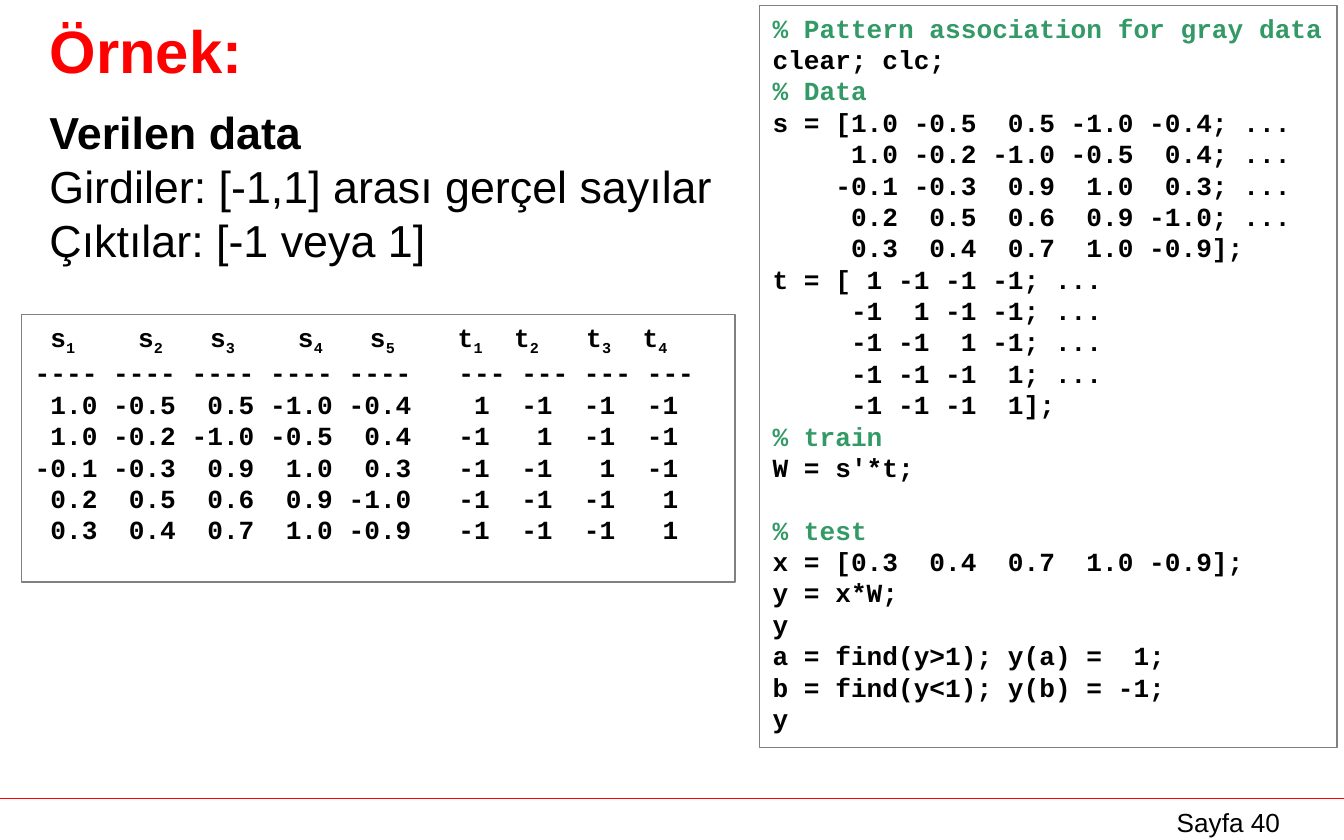
import pptx
import pptx.dml.color
import pptx.enum.shapes
import pptx.enum.text
import pptx.util
from lxml import etree
from pptx.util import Inches, Pt

RED, BLACK, GRAY, GREEN = "FF0000", "000000", "808080", "339966"
ALIGN = pptx.enum.text.PP_ALIGN
ANCHOR = pptx.enum.text.MSO_ANCHOR
BLANK_LINE = 16.8

HEADER = [(" s", "1"), ("    s", "2"), ("   s", "3"), ("    s", "4"), ("   s", "5"),
          ("    t", "1"), ("  t", "2"), ("   t", "3"), ("  t", "4")]

DATA = """\
---- ---- ---- ---- ----   --- --- --- ---
 1.0 -0.5  0.5 -1.0 -0.4    1  -1  -1  -1
 1.0 -0.2 -1.0 -0.5  0.4   -1   1  -1  -1
-0.1 -0.3  0.9  1.0  0.3   -1  -1   1  -1
 0.2  0.5  0.6  0.9 -1.0   -1  -1  -1   1
 0.3  0.4  0.7  1.0 -0.9   -1  -1  -1   1"""

CODE = """\
% Pattern association for gray data
clear; clc;
% Data
s = [1.0 -0.5  0.5 -1.0 -0.4; ...
     1.0 -0.2 -1.0 -0.5  0.4; ...
    -0.1 -0.3  0.9  1.0  0.3; ...
     0.2  0.5  0.6  0.9 -1.0; ...
     0.3  0.4  0.7  1.0 -0.9];
t = [ 1 -1 -1 -1; ...
     -1  1 -1 -1; ...
     -1 -1  1 -1; ...
     -1 -1 -1  1; ...
     -1 -1 -1  1];
% train
W = s'*t;

% test
x = [0.3  0.4  0.7  1.0 -0.9];
y = x*W;
y
a = find(y>1); y(a) =  1;
b = find(y<1); y(b) = -1;
y"""


def rgb(color):
    return pptx.dml.color.RGBColor.from_string(color)


def format_paragraph(paragraph, size, color=BLACK, bold=False, font="Arial",
                     align=ALIGN.LEFT, space_before=0):
    paragraph.alignment = align
    paragraph.space_before = Pt(space_before)
    for run in paragraph.runs:
        run.font.name = font
        run.font.size = Pt(size)
        run.font.bold = bold
        run.font.color.rgb = rgb(color)


def add_text(slide, left, top, width, height, text):
    shape = slide.shapes.add_textbox(Inches(left), Inches(top), Inches(width), Inches(height))
    shape.text_frame.word_wrap = True
    shape.text_frame.text = text
    return shape.text_frame.paragraphs


def add_code_box(slide, left, top, width, height):
    """Add an outlined rectangle for monospaced text and return its text frame."""
    box = slide.shapes.add_shape(pptx.enum.shapes.MSO_SHAPE.RECTANGLE,
                                 Inches(left), Inches(top), Inches(width), Inches(height))
    box.shadow.inherit = False
    box.fill.background()
    box.line.color.rgb = rgb(GRAY)
    box.line.width = Pt(0.75)
    box.text_frame.word_wrap = True
    box.text_frame.vertical_anchor = ANCHOR.TOP
    return box.text_frame


def format_code(paragraph, color=BLACK, space_before=0):
    format_paragraph(paragraph, 14, color, True, "Courier New", space_before=space_before)


def add_title(slide):
    title = slide.shapes.title
    title.left, title.top = Inches(0.27), Inches(0.04)
    title.width, title.height = Inches(9.21), Inches(0.66)
    title.text_frame.text = "Örnek:"
    title.text_frame.vertical_anchor = ANCHOR.MIDDLE
    format_paragraph(title.text_frame.paragraphs[0], 32, RED, True)


def add_description(slide):
    paragraphs = add_text(slide, 0.27, 0.73, 9.53, 4.82,
                          "Verilen data\n"
                          "Girdiler: [-1,1] arası gerçel sayılar\n"
                          "Çıktılar: [-1 veya 1]")
    for index, paragraph in enumerate(paragraphs):
        format_paragraph(paragraph, 24, bold=index == 0)


def add_data_listing(slide):
    frame = add_code_box(slide, 0.16, 2.34, 5.31, 1.99)
    header = frame.paragraphs[0]
    for letter, number in HEADER:
        header.add_run().text = letter
        subscript = header.add_run()
        subscript.text = number
        subscript.font._element.set("baseline", "-25000")
    for line in DATA.splitlines():
        frame.add_paragraph().text = line
    for paragraph in frame.paragraphs:
        format_code(paragraph)


def add_program(slide):
    """Add the program; an empty line becomes space before the next section."""
    frame = add_code_box(slide, 5.65, 0.04, 4.3, 5.52)
    sections = [section.splitlines() for section in CODE.split("\n\n")]
    frame.text = "\n".join(line for section in sections for line in section)
    section_starts = [section[0] for section in sections[1:]]
    for paragraph in frame.paragraphs:
        color = GREEN if paragraph.text.startswith("%") else BLACK
        gap = BLANK_LINE if paragraph.text in section_starts else 0
        format_code(paragraph, color, gap)


def add_footer(slide):
    rule = slide.shapes.add_connector(pptx.enum.shapes.MSO_CONNECTOR.STRAIGHT,
                                      Inches(0), Inches(5.94), Inches(10), Inches(5.94))
    rule.line.color.rgb = rgb(RED)
    rule.line.width = Pt(0.75)
    etree.SubElement(rule._element.spPr, pptx.oxml.ns.qn("a:effectLst"))
    page_number = add_text(slide, 8.39, 5.95, 1.5, 0.26, "Sayfa 40")[0]
    format_paragraph(page_number, 14, align=ALIGN.CENTER)


def main():
    presentation = pptx.Presentation()
    presentation.slide_width = Inches(10)
    presentation.slide_height = Inches(6.25)
    slide = presentation.slides.add_slide(presentation.slide_layouts[5])
    add_footer(slide)
    add_title(slide)
    add_description(slide)
    add_data_listing(slide)
    add_program(slide)
    presentation.save("out.pptx")


if __name__ == "__main__":
    main()
